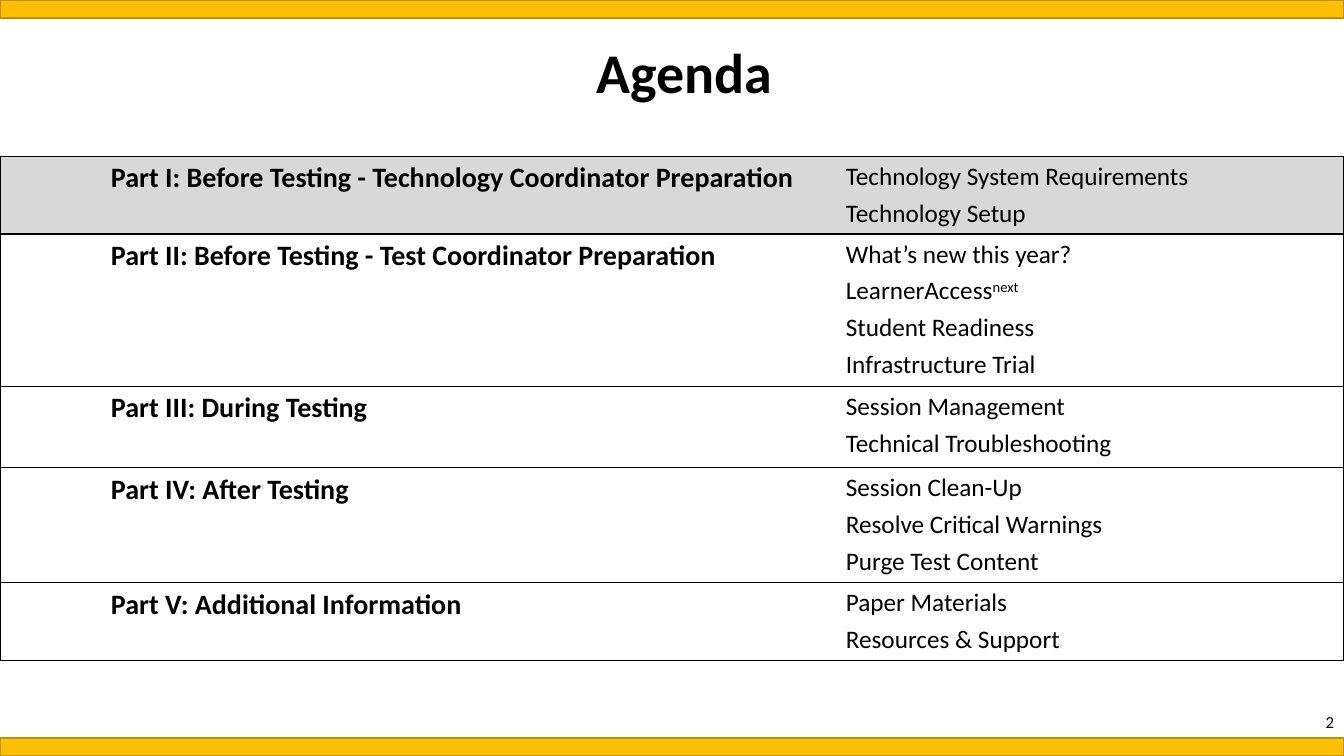
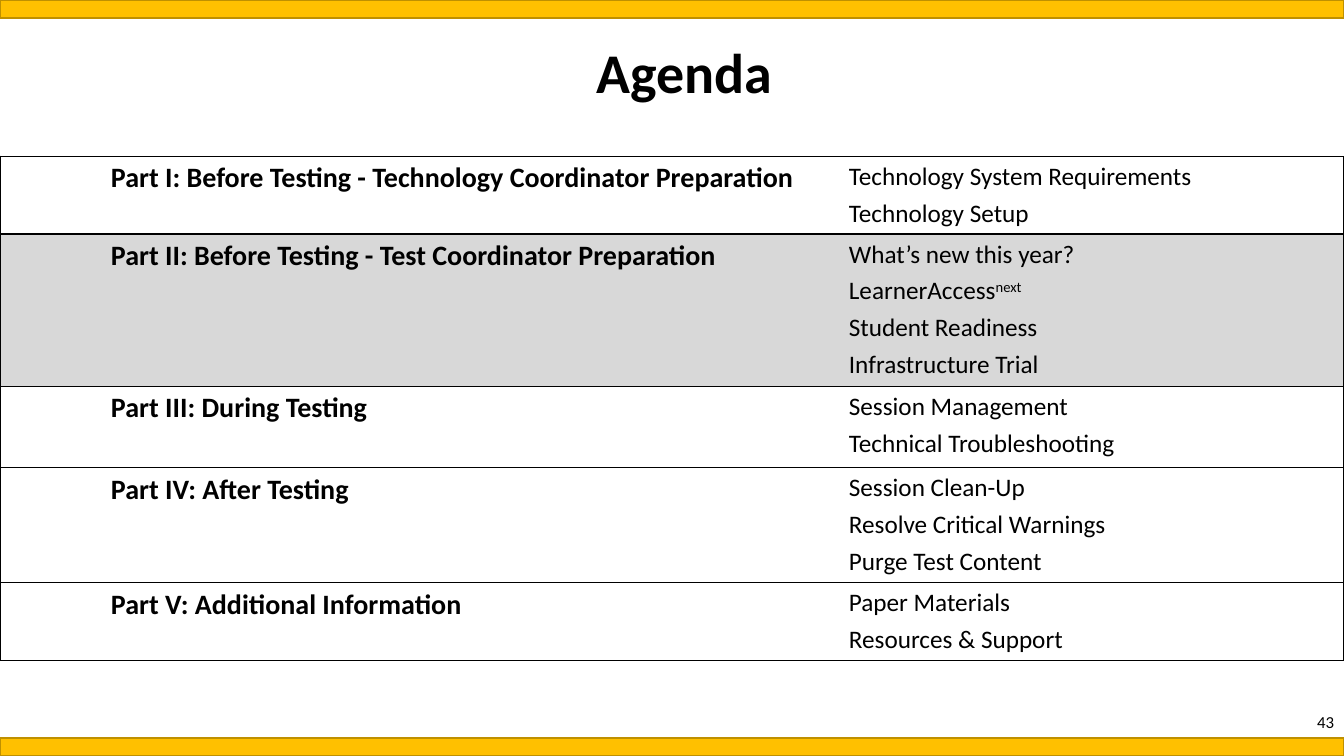
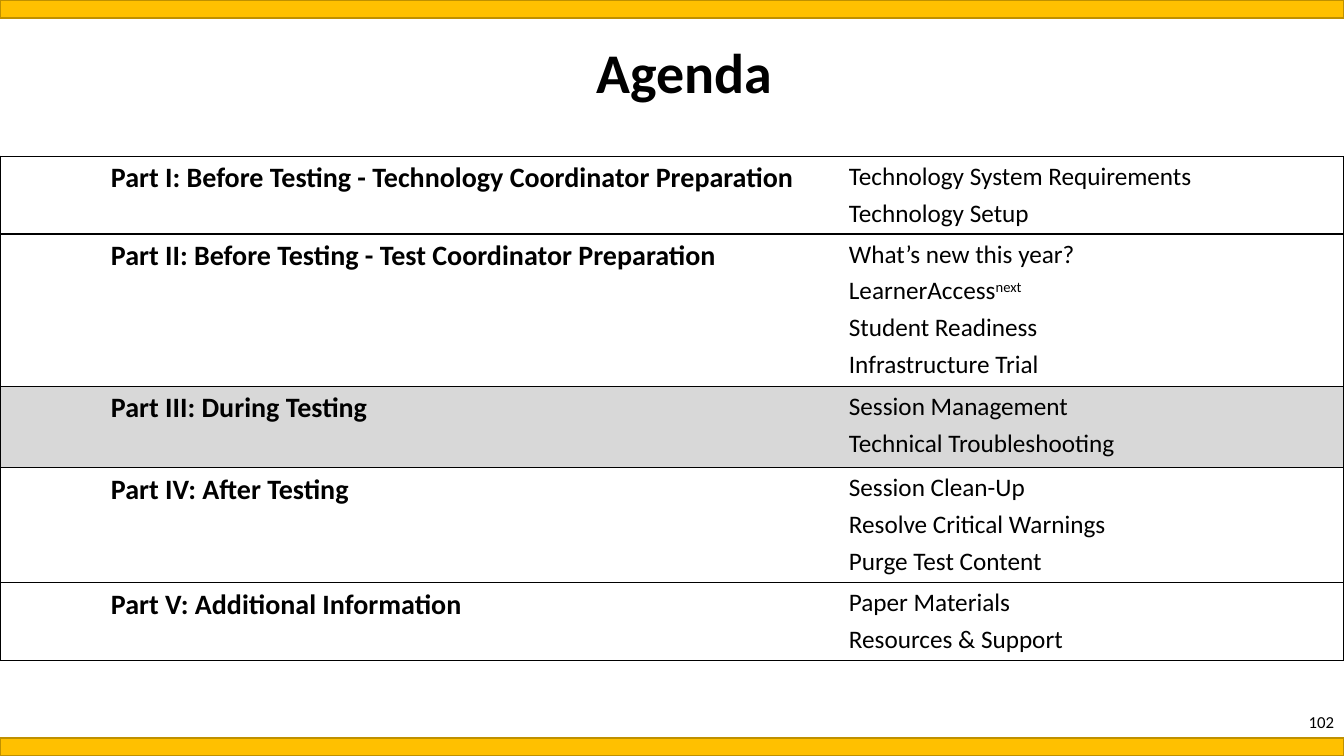
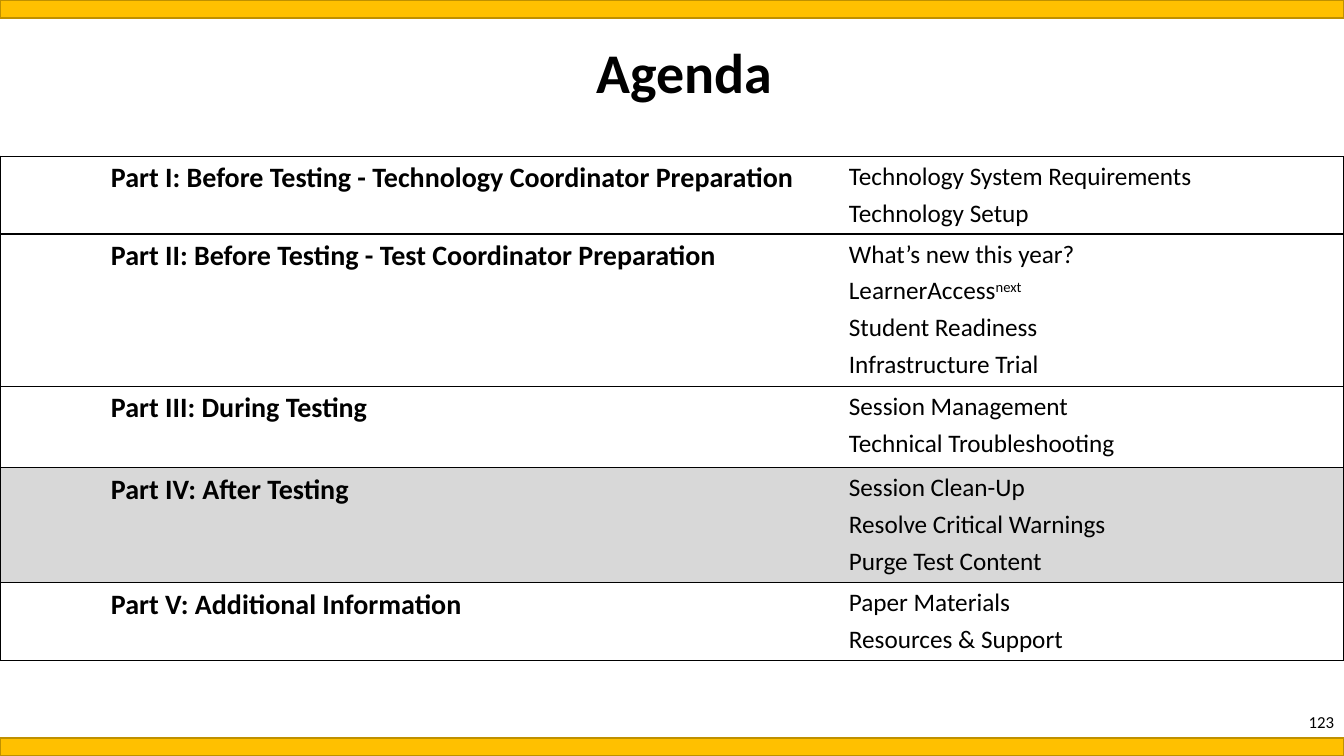
from lxml.etree import SubElement
from pptx import Presentation
from pptx.dml.color import RGBColor
from pptx.enum.shapes import MSO_SHAPE
from pptx.enum.text import MSO_ANCHOR, PP_ALIGN
from pptx.oxml.ns import qn
from pptx.util import Inches, Pt

HUES = {"ink": "000000", "gold": "FFC000", "rim": "BF9000", "mark": "D8D8D8"}
FONT = "Calibri"
WIDE, HIGH, BAND = 13.33, 7.5, 0.18
TOP = 1.55
PARTS = [
    ("Part I: Before Testing - Technology Coordinator Preparation", 0.77,
     ["Technology System Requirements", "Technology Setup"]),
    ("Part II: Before Testing - Test Coordinator Preparation", 1.51,
     ["What’s new this year?", "LearnerAccess^next", "Student Readiness",
      "Infrastructure Trial"]),
    ("Part III: During Testing", 0.81,
     ["Session Management", "Technical Troubleshooting"]),
    ("Part IV: After Testing", 1.14,
     ["Session Clean-Up", "Resolve Critical Warnings", "Purge Test Content"]),
    ("Part V: Additional Information", 0.77,
     ["Paper Materials", "Resources & Support"]),
]
AGENDAS = [(2, 0, 8.29), (43, 1, 8.32), (102, 2, 8.32), (123, 3, 8.32)]


def hue(name):
    """Return the named colour."""
    return RGBColor.from_string(HUES[name])


def write(frame, *lines, size=18, bold=False, align=PP_ALIGN.LEFT, gap=0, lead=None):
    """Fill a text frame with lines; text after ^ is raised."""
    for i, line in enumerate(lines):
        para = frame.add_paragraph() if i else frame.paragraphs[0]
        para.alignment = align
        para.line_spacing = lead
        para.space_before = Pt(gap if i else 0)
        base, _, high = line.partition("^")
        for text in filter(None, (base, high)):
            run = para.add_run()
            run.text = text
            font = run.font
            font.name, font.size, font.bold = FONT, Pt(size), bold
            font.color.rgb = hue("ink")
            if text is high:
                run._r.get_or_add_rPr().set("baseline", "30000")


def add_band(slide, layout, top):
    """Draw a gold band and move it to the layout."""
    band = slide.shapes.add_shape(
        MSO_SHAPE.RECTANGLE, 0, Inches(top), Inches(WIDE), Inches(BAND))
    band.shadow.inherit = False
    band.fill.solid()
    band.fill.fore_color.rgb = hue("gold")
    band.line.color.rgb = hue("rim")
    band.line.width = Pt(1)
    layout.shapes.element.append(band.element)


def set_title(layout):
    """Place the title that all slides inherit."""
    title = next(s for s in layout.placeholders if s.placeholder_format.idx == 0)
    title.left, title.top = Inches(1.04), Inches(0.31)
    title.width, title.height = Inches(11.5), Inches(0.87)
    title.text_frame.vertical_anchor = MSO_ANCHOR.MIDDLE


def set_edges(cell, sides):
    """Rule the given sides of a cell and clear the others."""
    props = cell._tc.get_or_add_tcPr()
    for side in "LRTB":
        edge = SubElement(props, qn(f"a:ln{side}"), w=str(Pt(1)))
        if side in sides:
            fill = SubElement(edge, qn("a:solidFill"))
            SubElement(fill, qn("a:srgbClr"), val=HUES["ink"])
        else:
            SubElement(edge, qn("a:noFill"))


def add_table(slide, now, split):
    """Add the agenda table with the current part shaded."""
    total = sum(high for _, high, _ in PARTS)
    table = slide.shapes.add_table(
        len(PARTS), 2, 0, Inches(TOP), Inches(WIDE), Inches(total)).table
    table.first_row = table.horz_banding = False
    table.columns[0].width = Inches(split)
    table.columns[1].width = Inches(WIDE - split)
    for i, (part, high, topics) in enumerate(PARTS):
        table.rows[i].height = Inches(high)
        left, right = table.rows[i].cells
        for cell, sides in ((left, "LTB"), (right, "RTB")):
            set_edges(cell, sides)
            if i == now:
                cell.fill.solid()
                cell.fill.fore_color.rgb = hue("mark")
            else:
                cell.fill.background()
        left.margin_left = Inches(1.1)
        write(left.text_frame, part, size=20, bold=True)
        write(right.text_frame, *topics, gap=4.4)


def add_page(slide, page):
    """Add the page number at the lower right."""
    box = slide.shapes.add_textbox(
        Inches(WIDE - 3), Inches(7.01), Inches(3), Inches(0.32))
    box.text_frame.word_wrap = True
    write(box.text_frame, str(page), size=12, align=PP_ALIGN.RIGHT)


def main():
    """Build the four agenda slides."""
    deck = Presentation()
    deck.slide_width, deck.slide_height = Inches(WIDE), Inches(HIGH)
    layout = deck.slide_layouts[5]
    set_title(layout)
    for page, now, split in AGENDAS:
        slide = deck.slides.add_slide(layout)
        write(slide.shapes.title.text_frame, "Agenda", size=40, bold=True,
              align=PP_ALIGN.CENTER, lead=0.9)
        add_table(slide, now, split)
        add_page(slide, page)
    for top in (HIGH - BAND, 0):
        add_band(deck.slides[0], layout, top)
    deck.save("out.pptx")


if __name__ == "__main__":
    main()
